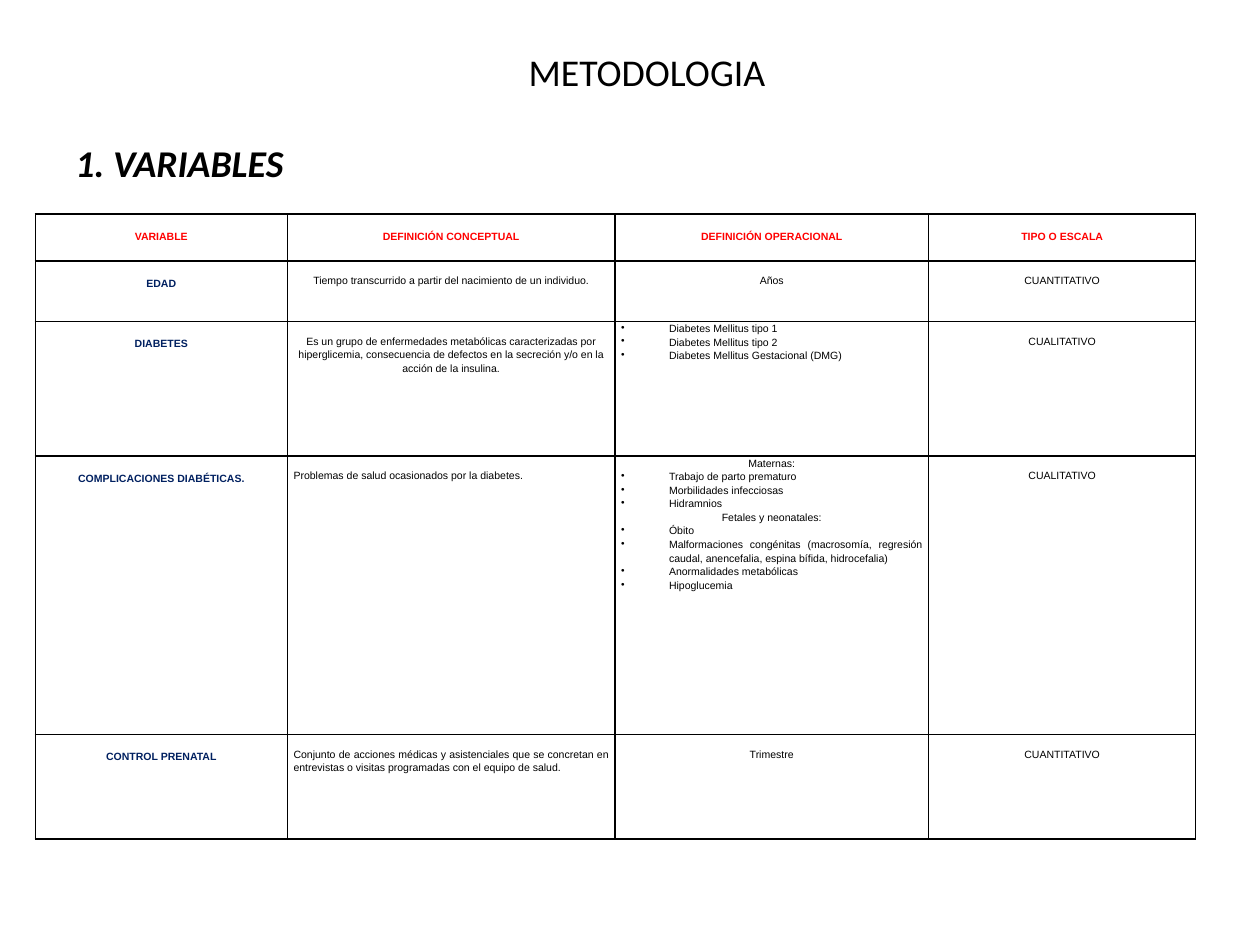
from dataclasses import dataclass

from lxml.etree import SubElement
from pptx import Presentation
from pptx.dml.color import RGBColor as RGB
from pptx.enum.text import MSO_ANCHOR as Anchor, PP_ALIGN as Align
from pptx.oxml.ns import qn
from pptx.util import Inches, Pt


@dataclass(frozen=True)
class Theme:
    black: str = "000000"
    red: str = "FF0000"
    navy: str = "002060"
    title_font: str = "Calibri"
    table_font: str = "Arial"
    title_size: float = 21.6
    table_size: float = 6
    line_spacing: float = 1.15
    border: float = 1
    bullet_indent: float = 0.38


T = Theme()
WIDTH, HEIGHT = 10, 7.5
COLS = [2, 2.6, 2.49, 2.12]
ROWS = [0.37, 0.48, 1.07, 2.21, 0.83]
LABEL_TOP, BODY_TOP = 0.12, 0.1

HEADERS = ["VARIABLE", "DEFINICIÓN CONCEPTUAL", "DEFINICIÓN OPERACIONAL", "TIPO O ESCALA"]

# Paragraphs of each body cell: "• " marks a bullet, "| " a justified paragraph
VARIABLES = [
    (["EDAD"],
     ["Tiempo transcurrido a partir del nacimiento de un individuo."],
     ["Años"],
     ["CUANTITATIVO"]),
    (["DIABETES"],
     ["Es un grupo de enfermedades metabólicas caracterizadas por",
      "hiperglicemia, consecuencia de defectos en la secreción y/o en la "
      "acción de la insulina."],
     ["• Diabetes Mellitus tipo 1",
      "• Diabetes Mellitus tipo 2",
      "• Diabetes Mellitus Gestacional (DMG)"],
     ["CUALITATIVO"]),
    (["COMPLICACIONES DIABÉTICAS."],
     ["| Problemas de salud ocasionados por la diabetes."],
     ["Maternas:",
      "• Trabajo de parto prematuro",
      "• Morbilidades infecciosas",
      "• Hidramnios",
      "Fetales y neonatales:",
      "• Óbito",
      "• Malformaciones congénitas (macrosomía, regresión caudal, "
      "anencefalia, espina bífida, hidrocefalia)",
      "• Anormalidades metabólicas",
      "• Hipoglucemia"],
     ["CUALITATIVO"]),
    (["CONTROL PRENATAL"],
     ["| Conjunto de acciones médicas y asistenciales que se concretan en "
      "entrevistas o visitas programadas con el equipo de salud."],
     ["Trimestre"],
     ["CUANTITATIVO"]),
]


def write(p, text, *, font=T.table_font, size=T.table_size, color=T.black, bold=False,
          italic=False, align=Align.CENTER, spacing=1.0, before=0, indent=0, bullet=False):
    """Fill one paragraph with formatted text."""
    p.alignment, p.line_spacing, p.space_before = align, spacing, Pt(before)
    pPr = p._p.get_or_add_pPr()
    if indent:
        pPr.set("marL", str(Inches(indent)))
    if bullet:
        pPr.set("indent", str(-Inches(indent)))
        SubElement(pPr, qn("a:buChar"), char="•")
    r = p.add_run()
    r.text = text
    f = r.font
    f.name, f.size, f.bold, f.italic = font, Pt(size), bold, italic
    f.color.rgb = RGB.from_string(color)


def add_borders(cell):
    tcPr = cell._tc.get_or_add_tcPr()
    for side in ("lnL", "lnR", "lnT", "lnB"):
        ln = SubElement(tcPr, qn(f"a:{side}"), w=str(Pt(T.border)))
        SubElement(SubElement(ln, qn("a:solidFill")), qn("a:srgbClr"), val=T.black)


def fill_cell(cell, lines, top, **fmt):
    add_borders(cell)
    cell.fill.background()
    cell.margin_left = cell.margin_right = Inches(0.05)
    cell.margin_top, cell.margin_bottom = Inches(top), 0
    tf = cell.text_frame
    for i, line in enumerate(lines):
        p = tf.add_paragraph() if i else tf.paragraphs[0]
        opts = dict(fmt, spacing=T.line_spacing)
        if line.startswith(("• ", "| ")):
            opts["align"] = Align.JUSTIFY
            if line[0] == "•":
                opts.update(bullet=True, indent=T.bullet_indent)
            line = line[2:]
        write(p, line, **opts)


def add_heading(s):
    sp = s.shapes.add_textbox(Inches(0.05 * WIDTH), Inches(0.04 * HEIGHT),
                              Inches(0.9 * WIDTH), Inches(1.25))
    tf = sp.text_frame
    tf.word_wrap, tf.vertical_anchor = True, Anchor.MIDDLE
    fmt = dict(font=T.title_font, size=T.title_size)
    write(tf.paragraphs[0], "METODOLOGIA", indent=0.27, **fmt)
    write(tf.add_paragraph(), "1. VARIABLES", bold=True, italic=True,
          align=Align.LEFT, before=26, **fmt)


def add_variable_table(s):
    table = s.shapes.add_table(len(ROWS), len(COLS), Inches(0.28), Inches(1.7),
                               Inches(sum(COLS)), Inches(sum(ROWS))).table
    table.first_row = table.horz_banding = False
    for col, width in zip(table.columns, COLS):
        col.width = Inches(width)
    for row, height in zip(table.rows, ROWS):
        row.height = Inches(height)

    # Header row
    for c, text in enumerate(HEADERS):
        fill_cell(table.cell(0, c), [text], LABEL_TOP, color=T.red, bold=True)

    # One row per variable, its name in the first column
    for r, (name, *details) in enumerate(VARIABLES, 1):
        fill_cell(table.cell(r, 0), name, LABEL_TOP, color=T.navy, bold=True)
        for c, lines in enumerate(details, 1):
            has_list = any(line.startswith("•") for line in lines)
            fill_cell(table.cell(r, c), lines, 0 if has_list else BODY_TOP)


def main():
    prs = Presentation()
    prs.slide_width, prs.slide_height = Inches(WIDTH), Inches(HEIGHT)
    s = prs.slides.add_slide(prs.slide_layouts[6])
    add_heading(s)
    add_variable_table(s)
    prs.save("out.pptx")


if __name__ == "__main__":
    main()
